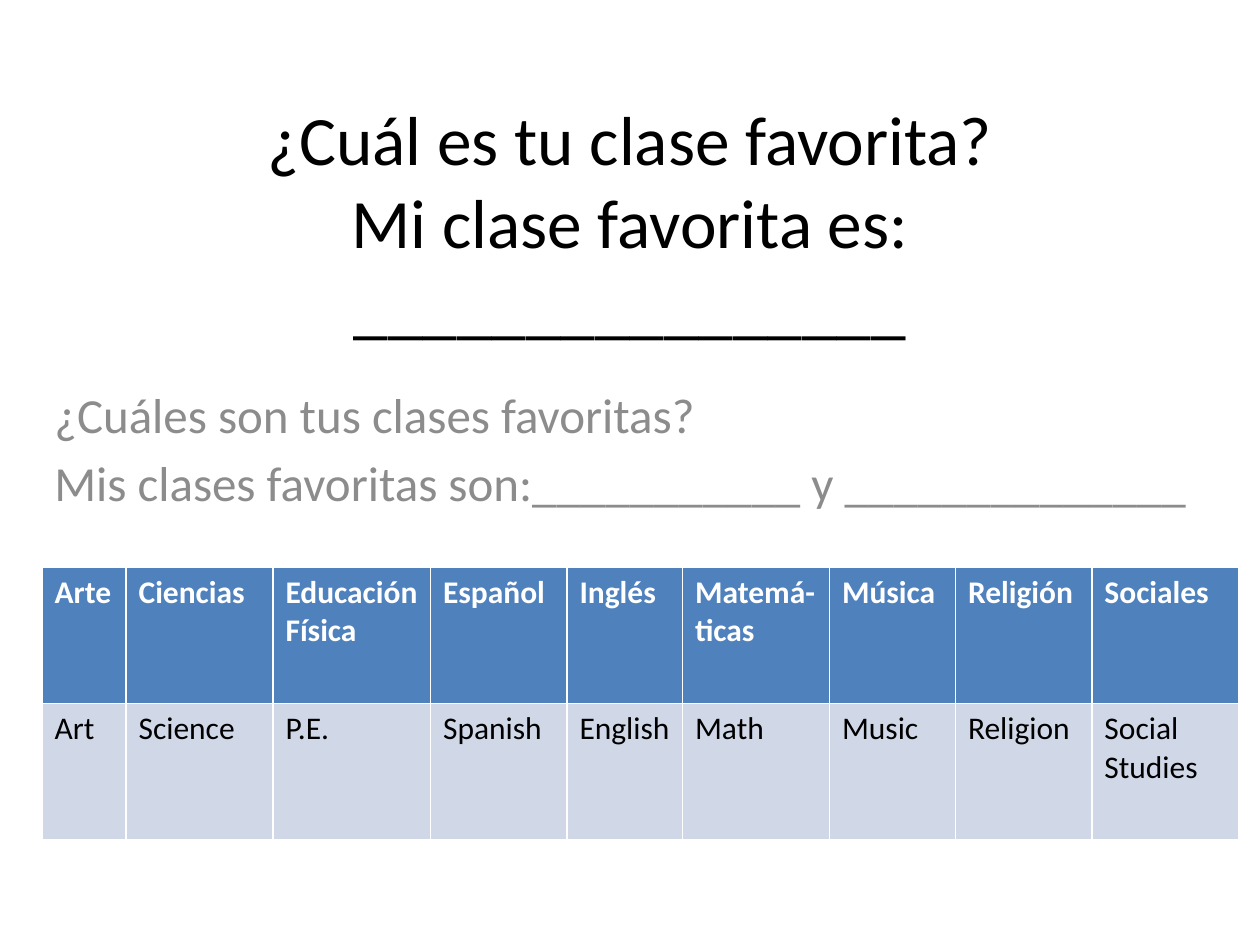
from pptx import Presentation
from pptx.dml.color import RGBColor
from pptx.enum.text import MSO_ANCHOR as Anchor, PP_ALIGN as Align
from pptx.util import Pt

TITLE = ["¿Cuál es tu clase favorita?\vMi clase favorita es:\v________________"]
QUESTIONS = ["¿Cuáles son tus clases favoritas?",
             "Mis clases favoritas son:___________ y ______________"]
# Spanish name, English name, column width
CLASSES = [
    ("Arte", "Art", 48),
    ("Ciencias", "Science", 84),
    ("Educación Física", "P.E.", 90),
    ("Español", "Spanish", 78),
    ("Inglés", "English", 66),
    ("Matemá-ticas", "Math", 84),
    ("Música", "Music", 72),
    ("Religión", "Religion", 78),
    ("Sociales", "Social Studies", 84),
]
ROW_HEIGHT = 78
# Fill, font colour and bold for the Spanish and English rows
ROW_STYLES = [("4F81BD", "FFFFFF", True), ("D0D8E8", "000000", False)]


def color(value):
    return RGBColor.from_string(value)


def write(frame, lines, size, font_color, bold=False, align=Align.LEFT, before=0):
    frame.word_wrap = True
    for index, line in enumerate(lines):
        paragraph = frame.paragraphs[0] if index == 0 else frame.add_paragraph()
        paragraph.text = line
        paragraph.alignment = align
        paragraph.space_before = Pt(before)
        for run in paragraph.runs:
            run.font.name = "Calibri"
            run.font.size = Pt(size)
            run.font.bold = bold
            run.font.color.rgb = color(font_color)


def add_text(slide, box, lines, anchor=Anchor.TOP, **text_format):
    shape = slide.shapes.add_textbox(*map(Pt, box))
    shape.text_frame.vertical_anchor = anchor
    write(shape.text_frame, lines, **text_format)


presentation = Presentation()
presentation.slide_width, presentation.slide_height = Pt(720), Pt(540)
slide = presentation.slides.add_slide(presentation.slide_layouts[6])

# Title and questions
add_text(slide, (54, 48, 612, 156), TITLE, anchor=Anchor.MIDDLE,
         size=39.6, font_color="000000", align=Align.CENTER)
add_text(slide, (24, 216, 690, 288), QUESTIONS,
         size=28, font_color="8C8C8C", before=5.6)

# Table of classes: white borders come from the default table style
total_width = sum(width for *_, width in CLASSES)
table = slide.shapes.add_table(
    len(ROW_STYLES), len(CLASSES), Pt(24), Pt(324),
    Pt(total_width), Pt(ROW_HEIGHT * len(ROW_STYLES))).table
for row in table.rows:
    row.height = Pt(ROW_HEIGHT)
for column, (*names, width) in enumerate(CLASSES):
    table.columns[column].width = Pt(width)
    for row, (name, (fill, font_color, bold)) in enumerate(zip(names, ROW_STYLES)):
        cell = table.cell(row, column)
        cell.fill.solid()
        cell.fill.fore_color.rgb = color(fill)
        write(cell.text_frame, [name], size=18, font_color=font_color, bold=bold)

presentation.save("out.pptx")
